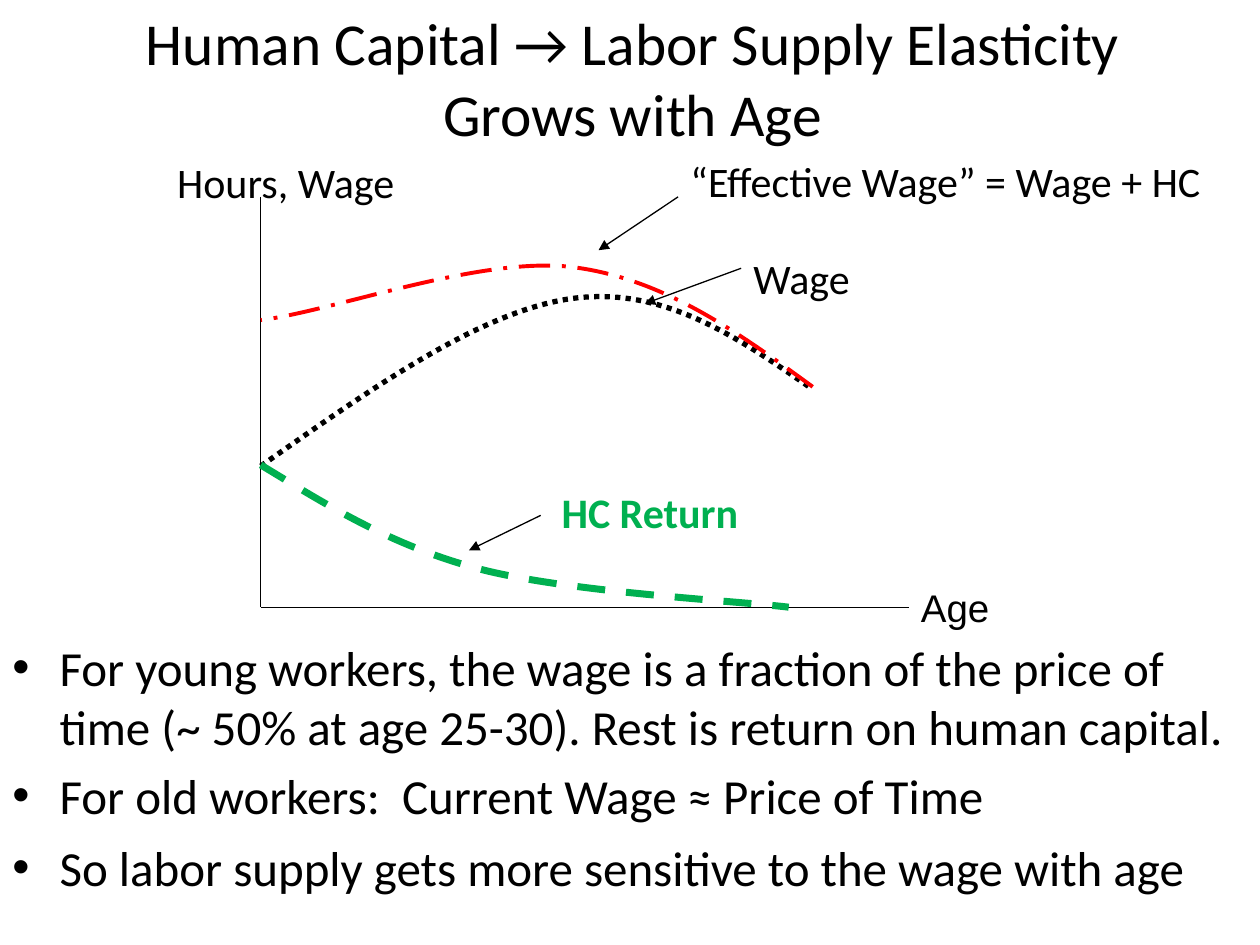
import lxml.etree
import pptx
import pptx.dml.color
import pptx.enum.dml
import pptx.enum.shapes
import pptx.enum.text
import pptx.oxml.ns
import pptx.util

Pt = pptx.util.Pt
Dash = pptx.enum.dml.MSO_LINE
Align = pptx.enum.text.PP_ALIGN
Anchor = pptx.enum.text.MSO_ANCHOR
qn = pptx.oxml.ns.qn


def color(hex_code):
    return pptx.dml.color.RGBColor.from_string(hex_code)


def write(frame, *paragraphs, size=24, font="Calibri", ink="000000", bold=False,
          align=Align.LEFT, anchor=Anchor.TOP, spacing=1.0):
    frame.word_wrap = True
    frame.auto_size = pptx.enum.text.MSO_AUTO_SIZE.NONE
    frame.vertical_anchor = anchor
    for index, text in enumerate(paragraphs):
        paragraph = frame.add_paragraph() if index else frame.paragraphs[0]
        paragraph.alignment = align
        paragraph.line_spacing = spacing
        run = paragraph.add_run()
        run.text = text
        run.font.size = Pt(size)
        run.font.name = font
        run.font.bold = bold
        run.font.color.rgb = color(ink)


deck = pptx.Presentation()
deck.slide_width, deck.slide_height = Pt(720), Pt(540)
slide = deck.slides.add_slide(deck.slide_layouts[5])
shapes = slide.shapes

title = shapes.title
title.left, title.top, title.width, title.height = Pt(42.5), Pt(0), Pt(638), Pt(88.5)
write(title.text_frame, "Human Capital → Labor Supply Elasticity Grows with Age",
      size=34, align=Align.CENTER, anchor=Anchor.MIDDLE)

conclusions = shapes.add_textbox(Pt(0), Pt(360.8), Pt(720), Pt(179.2)).text_frame
write(conclusions,
      "For young workers, the wage is a fraction of the price of time "
      "(~ 50% at age 25-30). Rest is return on human capital.",
      "For old workers:  Current Wage ≈ Price of Time",
      "So labor supply gets more sensitive to the wage with age",
      size=28)
for paragraph, gap in zip(conclusions.paragraphs, (5.6, 5.6, 7.6)):
    paragraph.space_before = Pt(gap)
    properties = paragraph._p.get_or_add_pPr()
    properties.set("marL", str(Pt(27)))
    properties.set("indent", str(-Pt(27)))
    lxml.etree.SubElement(properties, qn("a:buFont")).set("typeface", "Arial")
    lxml.etree.SubElement(properties, qn("a:buChar")).set("char", "•")

origin_x, origin_y = 149, 347
axes_and_arrows = [
    (origin_x, 112.5, origin_x, origin_y, False),
    (origin_x, origin_y, 519.2, origin_y, False),
    (309, 294.5, 268, 314.5, True),
    (387.5, 112.5, 342, 143, True),
    (423.5, 153.3, 368.5, 173.5, True),
]
for x1, y1, x2, y2, has_head in axes_and_arrows:
    line = shapes.add_connector(pptx.enum.shapes.MSO_CONNECTOR.STRAIGHT,
                                Pt(x1), Pt(y1), Pt(x2), Pt(y2))
    line.line.color.rgb = color("000000")
    line.line.width = Pt(0.75)
    if has_head:
        lxml.etree.SubElement(line.line._get_or_add_ln(), qn("a:tailEnd")).set("type", "triangle")
    lxml.etree.SubElement(line._element.spPr, qn("a:effectLst"))

wage = [(origin_x, 266.4), (211.7, 222.5), (274.3, 177.8), (326.9, 170.6),
        (379.4, 163.4), (421.9, 193), (464.4, 222.5)]
hc_return = [(origin_x, 265.7), (185.8, 288), (221.8, 311), (272.2, 324.7),
             (322.6, 338.4), (421.2, 343.4), (450.7, origin_y)]
effective_wage = [(464.4, 221), (421.9, 190.1), (379.4, 159.1), (326.9, 152.6),
                  (274.3, 146.2), (190.6, 177.8), (origin_x, 182.9)]
for controls, ink, width, dash in [
    (wage, "000000", 3, Dash.ROUND_DOT),
    (hc_return, "00B050", 4, Dash.DASH),
    (effective_wage, "FF0000", 2.25, Dash.LONG_DASH_DOT),
]:
    start, *others = [(Pt(x), Pt(y)) for x, y in controls]
    builder = shapes.build_freeform(*start)
    builder.add_line_segments(others, close=False)
    curve = builder.convert_to_shape()
    outline = next(curve._element.iter(qn("a:path")))
    segments = outline.findall(qn("a:lnTo"))
    for first in range(0, len(segments), 3):
        bezier = lxml.etree.SubElement(outline, qn("a:cubicBezTo"))
        for segment in segments[first:first + 3]:
            bezier.append(segment[0])
            outline.remove(segment)
    curve.shadow.inherit = False
    curve.fill.background()
    curve.line.color.rgb = color(ink)
    curve.line.width = Pt(width)
    curve.line.dash_style = dash

for text, left, top, width, height, style in [
    ("Hours, Wage", 94.2, 81.8, 164, 31, {"spacing": 1.15}),
    ("HC Return", 313.8, 270, 137.5, 36, {"spacing": 1.15, "ink": "00B050", "bold": True}),
    ("“Effective Wage” = Wage + HC", 387.5, 80.8, 312.5, 52, {"spacing": 1.15}),
    ("Wage", 423.5, 136.2, 88, 37.5, {"spacing": 1.15}),
    ("Age", 519.2, 330, 57.5, 34, {"size": 22, "font": "Arial"}),
]:
    label = shapes.add_textbox(Pt(left), Pt(top), Pt(width), Pt(height))
    write(label.text_frame, text, **style)

deck.save("out.pptx")
